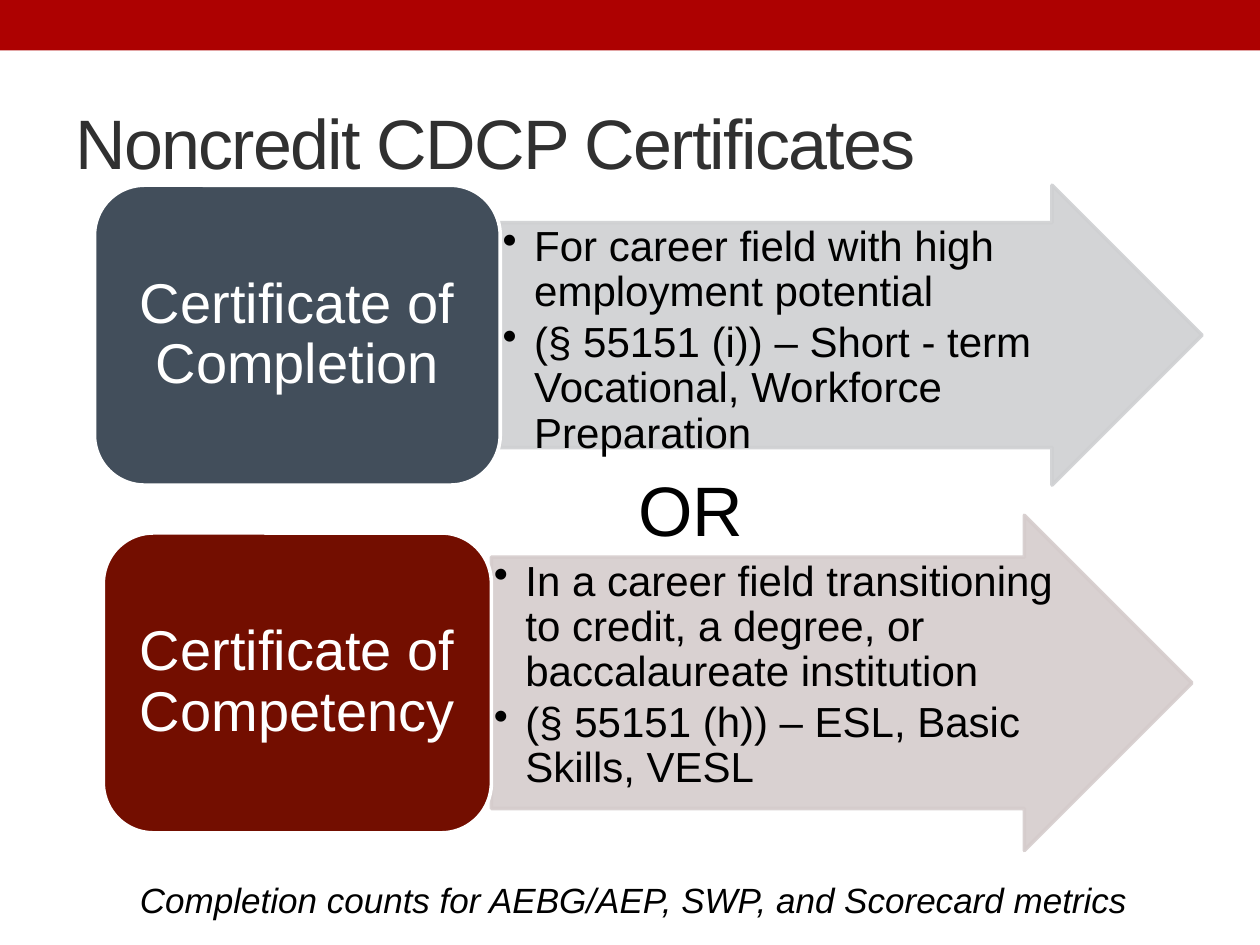
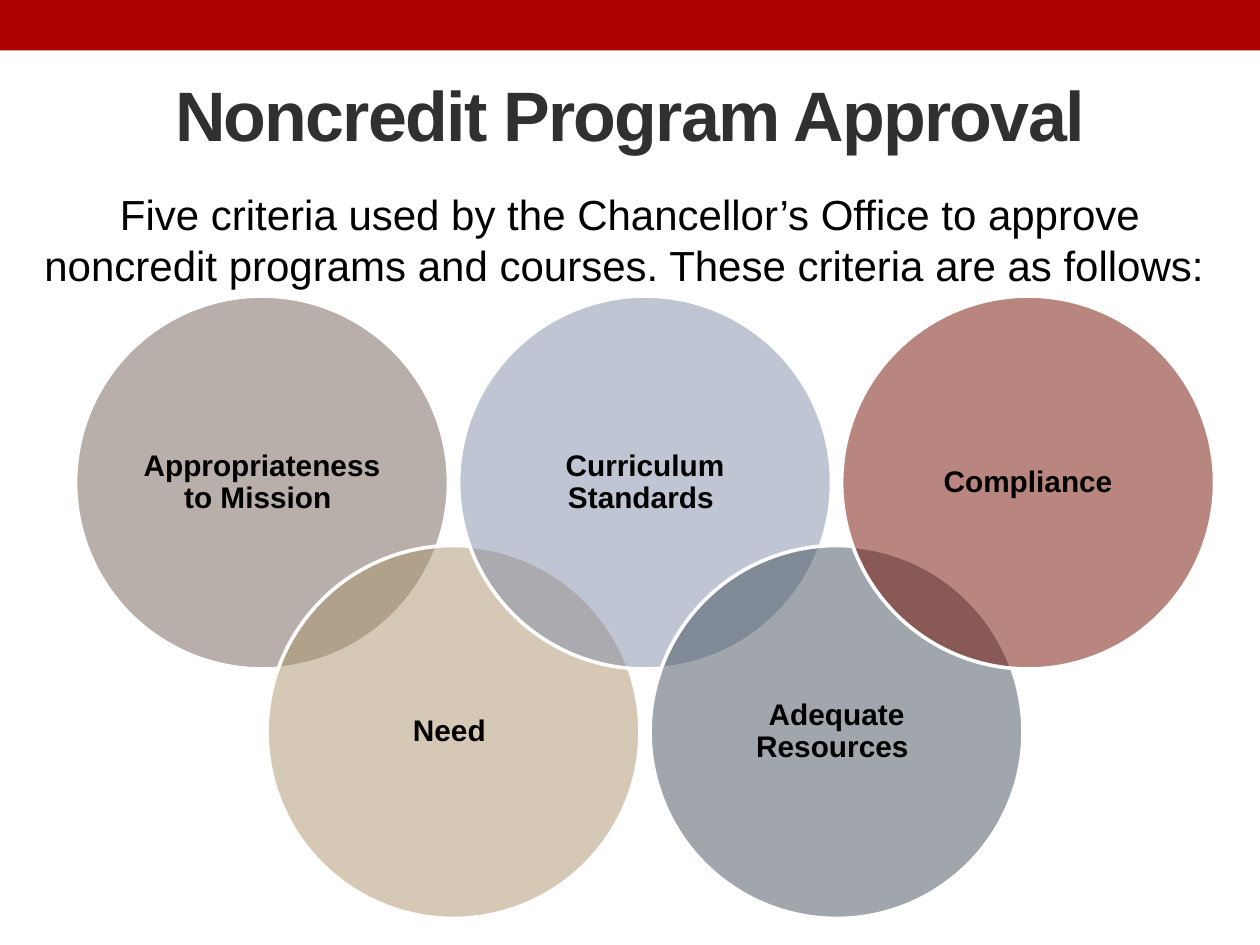
from pptx import Presentation
from pptx.util import Pt
from pptx.dml.color import RGBColor
from pptx.enum.shapes import MSO_SHAPE as Kind
from pptx.enum.text import MSO_ANCHOR as Anchor, MSO_AUTO_SIZE as Fit, PP_ALIGN as Align
from pptx.oxml.ns import qn
from lxml.etree import SubElement

PX = 9144
FONT = "Arial"
RED, GREY, BLACK, WHITE = "AD0101", "303030", "000000", "FFFFFF"
SLATE, MAROON = "424E5B", "730E00"


def paint(fill, hue, alpha=100):
    fill.solid()
    fill.fore_color.rgb = RGBColor.from_string(hue)
    if alpha < 100:
        for tint in fill._xPr.iter(qn("a:srgbClr")):
            SubElement(tint, qn("a:alpha"), val=str(alpha * 1000))


def write(frame, lines, size, hue, align=Align.CENTER, bold=False,
          slant=False, space=None, dots=False):
    frame.word_wrap = True
    for i, line in enumerate(lines):
        para = frame.add_paragraph() if i else frame.paragraphs[0]
        para.alignment = align
        if space:
            para.line_spacing = space
        if dots:
            para.space_after = Pt(3)
            props = para._p.get_or_add_pPr()
            props.set("marL", str(25 * PX))
            props.set("indent", str(-25 * PX))
            SubElement(props, qn("a:buChar"), char="•")
        run = para.add_run()
        run.text = line
        font = run.font
        font.name, font.size = FONT, Pt(size)
        font.bold, font.italic = bold, slant
        paint(font.fill, hue)


deck = Presentation()
deck.slide_width, deck.slide_height = 1000 * PX, 750 * PX
plain = deck.slide_layouts[5]

heads = [
    ("Noncredit CDCP Certificates", 58, Align.LEFT, False),
    ("Noncredit Program Approval", 36, Align.CENTER, True),
]
for text, top, align, bold in heads:
    slide = deck.slides.add_slide(plain)
    title = slide.shapes.title
    title.left, title.top, title.width, title.height = 50 * PX, top * PX, 900 * PX, 108 * PX
    frame = title.text_frame
    frame.auto_size = Fit.NONE
    frame.vertical_anchor = Anchor.MIDDLE
    write(frame, [text], 40, GREY, align, bold)
    frame.paragraphs[0].runs[0].font._element.set("spc", "-100")

first, last = deck.slides

band = first.shapes.add_shape(Kind.RECTANGLE, 0, 0, 1000 * PX, 40 * PX)
band.shadow.inherit = False
paint(band.fill, RED)
band.line.fill.background()
plain.shapes._spTree.insert(2, band._element)

certs = [
    ("Certificate of Completion", (75, 147, 322, 238), SLATE,
     (397, 147, 557, 238), "CFD0D2",
     ["For career field with high employment potential",
      "(§ 55151 (i)) – Short - term Vocational, Workforce Preparation"]),
    ("Certificate of Competency", (82, 423, 308, 238), MAROON,
     (390, 409, 556, 266), "D5CCCC",
     ["In a career field transitioning to credit, a degree, or baccalaureate institution",
      "(§ 55151 (h)) – ESL, Basic Skills, VESL"]),
]
goals = [
    ("Appropriateness to Mission ", "726056"),
    ("Need ", "AC956E"),
    ("Curriculum Standards ", "808DA9"),
    ("Adequate Resources ", SLATE),
    ("Compliance", MAROON),
]

forms = []
for name, box, hue, reach, pale, notes in certs:
    forms.append((first, Kind.RIGHT_ARROW, reach, pale, pale, 90, notes, 24, BLACK, (2, 2)))
    forms.append((first, Kind.ROUNDED_RECTANGLE, box, hue, WHITE, 100, [name], 32, WHITE, (13, 7)))
for i, (name, hue) in enumerate(goals):
    spot = (60 + 152 * i, 235 + 198 * (i % 2), 296, 296)
    forms.append((last, Kind.OVAL, spot, hue, WHITE, 50, [name], 17, BLACK, (7, 7)))

for slide, kind, box, hue, edge, alpha, lines, size, ink, (side, rim) in forms:
    shape = slide.shapes.add_shape(kind, *[n * PX for n in box])
    shape.shadow.inherit = False
    paint(shape.fill, hue, alpha)
    paint(shape.line.fill, edge, alpha if edge == hue else 100)
    shape.line.width = Pt(2.08)
    arrow = kind == Kind.RIGHT_ARROW
    if arrow:
        shape.adjustments[0], shape.adjustments[1] = 0.75, 0.5
    frame = shape.text_frame
    frame.margin_left = frame.margin_right = side * PX
    frame.margin_top = frame.margin_bottom = rim * PX
    frame.vertical_anchor = Anchor.TOP if arrow else Anchor.MIDDLE
    write(frame, lines, size, ink, Align.LEFT if arrow else Align.CENTER,
          bold=kind == Kind.OVAL, space=0.9, dots=arrow)

notes = [
    (first, (28, 692, 950, 44), 20, True,
     "Completion counts for AEBG/AEP, SWP, and Scorecard metrics"),
    (first, (457, 365, 198, 77), 40, False, "OR "),
    (last, (25, 145, 950, 91), 24, False,
     "Five criteria used by the Chancellor’s Office to approve noncredit programs "
     "and courses. These criteria are as follows: "),
]
for slide, box, size, slant, text in notes:
    frame = slide.shapes.add_textbox(*[n * PX for n in box]).text_frame
    frame.auto_size = Fit.SHAPE_TO_FIT_TEXT
    write(frame, [text], size, BLACK, slant=slant)

deck.save("out.pptx")
